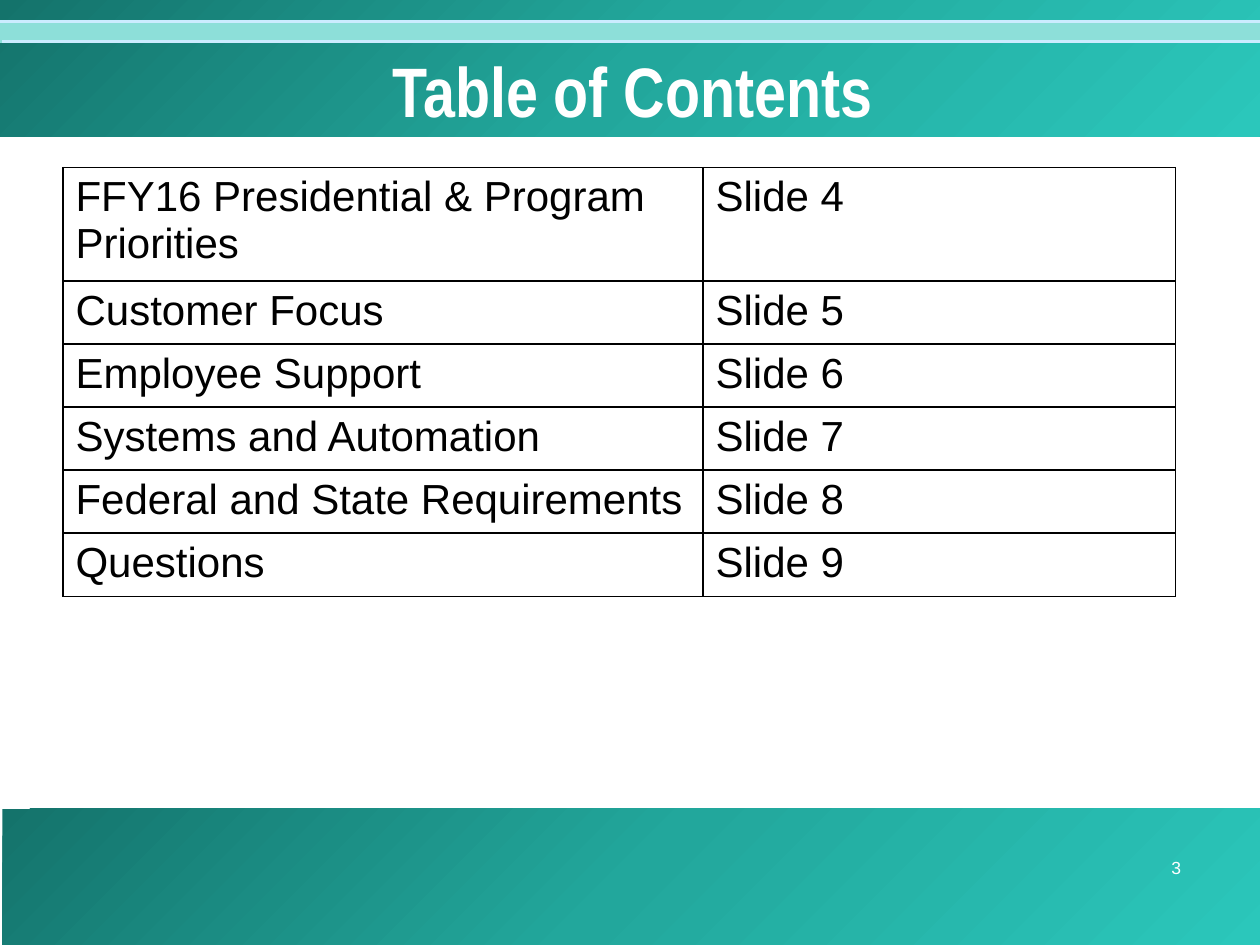
"""Build the table of contents slide."""
from copy import deepcopy

from lxml.etree import SubElement
from pptx import Presentation
from pptx.dml.color import RGBColor
from pptx.enum.shapes import MSO_CONNECTOR as Connector, MSO_SHAPE as Shape
from pptx.enum.text import MSO_ANCHOR as Anchor, PP_ALIGN as Align
from pptx.oxml.ns import qn
from pptx.util import Inches, Pt

WHITE = RGBColor(0xFF, 0xFF, 0xFF)
BLACK = RGBColor(0, 0, 0)
AQUA = RGBColor(0x8D, 0xDF, 0xD9)
ICE = RGBColor(0xCC, 0xEC, 0xFF)
TEALS = [RGBColor(0x14, 0x73, 0x6B), RGBColor(0x22, 0xA7, 0x9C), RGBColor(0x2B, 0xC7, 0xBB)]

TITLE = "Table of Contents"
PAGE_NUMBER = "3"
FIRST_TARGET = 4
TOPICS = [
    "FFY16 Presidential & Program Priorities",
    "Customer Focus",
    "Employee Support",
    "Systems and Automation",
    "Federal and State Requirements",
    "Questions",
]
COLUMN_WIDTHS = [5.08, 3.75]
ROW_HEIGHTS = [0.85] + [0.47] * (len(TOPICS) - 1)
BANDS = [(0.02, 6.42), (0, 0)]
RULES = [(0, 0.17), (0.02, 0.33)]


def write(frame, text, size, color, font="Arial", bold=False, align=Align.LEFT):
    frame.word_wrap = True
    para = frame.paragraphs[0]
    para.alignment = align
    span = para.add_run()
    span.text = text
    span.font.name = font
    span.font.size = Pt(size)
    span.font.bold = bold
    span.font.color.rgb = color


def add_bar(page, left, top, height):
    bar = page.shapes.add_shape(
        Shape.RECTANGLE, Inches(left), Inches(top), Inches(10), Inches(height))
    bar.shadow.inherit = False
    bar.line.fill.background()
    return bar


def fill_gradient(fill, colors):
    fill.gradient()
    fill.gradient_angle = 315
    stop_list = fill._xPr.find(qn("a:gradFill")).find(qn("a:gsLst"))
    stop_list.append(deepcopy(stop_list[-1]))
    for index, (stop, color) in enumerate(zip(fill.gradient_stops, colors)):
        stop.position = index / (len(colors) - 1)
        stop.color.rgb = color


def add_rule(page, left, top):
    rule = page.shapes.add_connector(
        Connector.STRAIGHT, Inches(left), Inches(top), Inches(10), Inches(top))
    rule.line.color.rgb = ICE
    rule.line.width = Pt(1.5)
    SubElement(rule._element.spPr, qn("a:effectLst"))


def add_label(page, left, top, width, height):
    box = page.shapes.add_textbox(Inches(left), Inches(top), Inches(width), Inches(height))
    return box.text_frame


def outline(cell):
    properties = cell._tc.get_or_add_tcPr()
    for index, side in enumerate(("lnL", "lnR", "lnT", "lnB")):
        border = properties.makeelement(qn(f"a:{side}"), {"w": str(Pt(1))})
        solid = SubElement(border, qn("a:solidFill"))
        SubElement(solid, qn("a:srgbClr"), val=str(BLACK))
        properties.insert(index, border)


def add_contents(page):
    table = page.shapes.add_table(
        len(TOPICS), len(COLUMN_WIDTHS), Inches(0.5), Inches(1.33),
        Inches(sum(COLUMN_WIDTHS)), Inches(sum(ROW_HEIGHTS))).table
    table.first_row = False
    table.horz_banding = False
    for column, width in zip(table.columns, COLUMN_WIDTHS):
        column.width = Inches(width)
    for index, (row, topic, height) in enumerate(zip(table.rows, TOPICS, ROW_HEIGHTS)):
        row.height = Inches(height)
        for cell, text in zip(row.cells, (topic, f"Slide {FIRST_TARGET + index}")):
            cell.fill.solid()
            cell.fill.fore_color.rgb = WHITE
            outline(cell)
            write(cell.text_frame, text, size=24, color=BLACK)


def main():
    deck = Presentation()
    deck.slide_width, deck.slide_height = Inches(10), Inches(7.5)
    page = deck.slides.add_slide(deck.slide_layouts[6])
    for left, top in BANDS:
        fill_gradient(add_bar(page, left, top, 1.08).fill, TEALS)
    stripe = add_bar(page, 0, 0.17, 0.17)
    stripe.fill.solid()
    stripe.fill.fore_color.rgb = AQUA
    for left, top in RULES:
        add_rule(page, left, top)
    write(add_label(page, 9, 6.75, 0.67, 0.42), PAGE_NUMBER,
          size=10, color=WHITE, align=Align.CENTER)
    heading = add_label(page, 0.02, 0.42, 10, 0.58)
    heading.vertical_anchor = Anchor.MIDDLE
    write(heading, TITLE, size=40, color=WHITE, font="Arial Narrow",
          bold=True, align=Align.CENTER)
    add_contents(page)
    deck.save("out.pptx")


if __name__ == "__main__":
    main()
